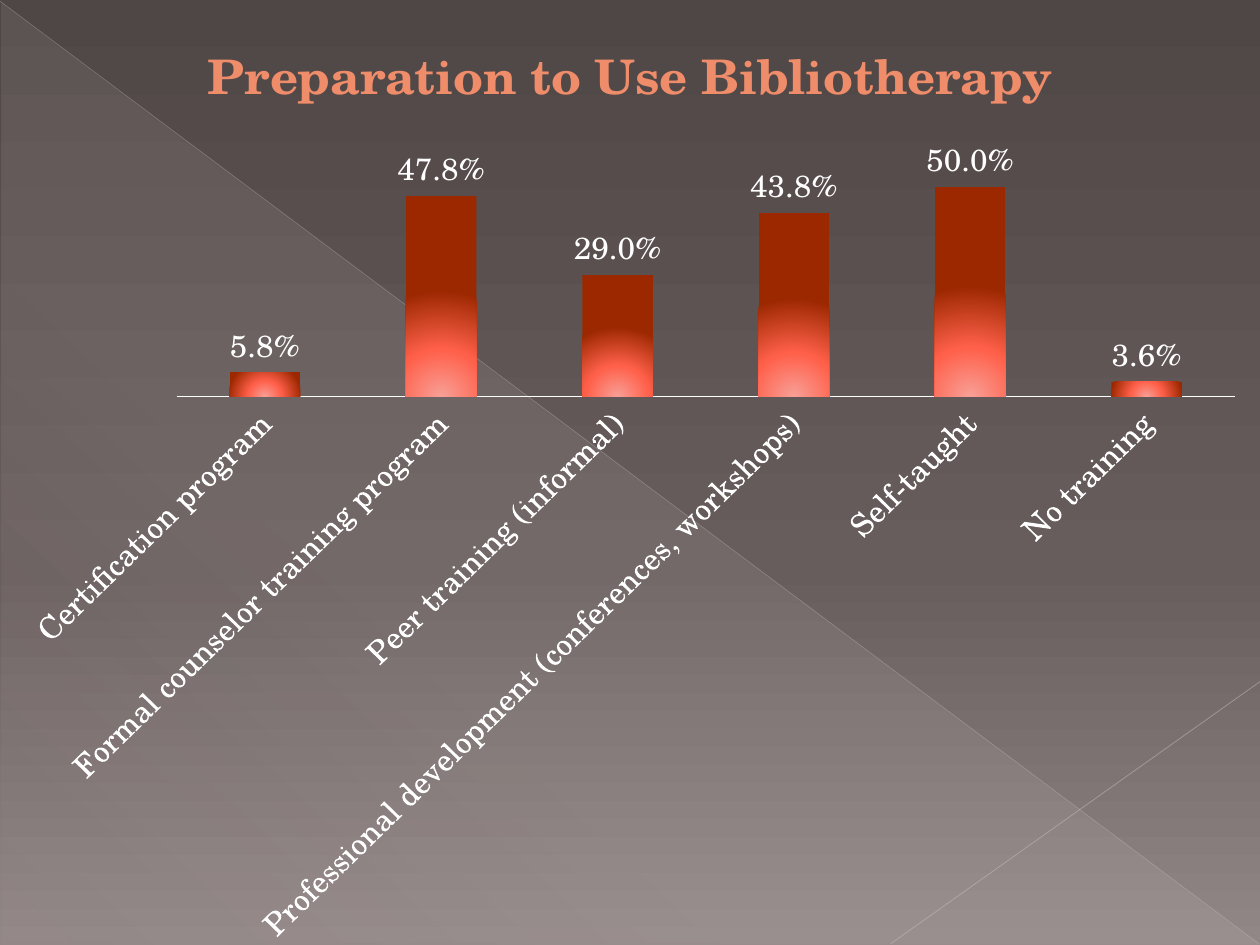
from lxml.etree import SubElement
from pptx import Presentation
from pptx.chart.data import CategoryChartData
from pptx.dml.color import RGBColor
from pptx.enum.chart import XL_CHART_TYPE, XL_LABEL_POSITION, XL_TICK_LABEL_POSITION, XL_TICK_MARK
from pptx.enum.shapes import MSO_CONNECTOR, MSO_SHAPE
from pptx.oxml import parse_xml
from pptx.oxml.ns import nsdecls, qn
from pptx.util import Inches, Pt

WHITE = RGBColor(0xFF, 0xFF, 0xFF)
SALMON = RGBColor(0xEF, 0x8C, 0x6A)
CREAM = RGBColor(0xE9, 0xE5, 0xDC)
PALE_LINE = RGBColor(0xC1, 0xBE, 0xBE)
LIGHT_LINE = RGBColor(0xC7, 0xC5, 0xC5)
DARK_TAUPE = RGBColor(0x4F, 0x46, 0x46)
TAUPE = RGBColor(0x68, 0x5D, 0x5D)
LIGHT_TAUPE = RGBColor(0x92, 0x87, 0x87)
BAR_GLOW = RGBColor(0xF8, 0xA0, 0x97)
BAR_RED = RGBColor(0xFF, 0x60, 0x4A)
BAR_RUST = RGBColor(0x9C, 0x28, 0x00)

RADIAL = '<a:path path="circle"><a:fillToRect l="50000" t="100000" r="50000"/></a:path>'

TRAINING = {
    "Certification program": 0.058,
    "Formal counselor training program": 0.478,
    "Peer training (informal)": 0.29,
    "Professional development (conferences, workshops)": 0.438,
    "Self-taught": 0.5,
    "No training": 0.036,
}


def linear(angle):
    return f'<a:lin ang="{angle * 60000}" scaled="0"/>'


class SlideBuilder:
    font_name = "TeX Gyre Schola"
    body_size = Pt(18)
    title_size = Pt(28)
    number_format = "0.0%"

    def __init__(self, page):
        self.page = page

    def gradient(self, fill, owner, stops, direction):
        fill.gradient()
        old = next(owner.iter(qn("a:gradFill")))
        marks = "".join(
            f'<a:gs pos="{place * 1000}"><a:srgbClr val="{color}">'
            f'<a:alpha val="{opacity * 1000}"/></a:srgbClr></a:gs>'
            for place, color, opacity in stops
        )
        new = parse_xml(
            f'<a:gradFill {nsdecls("a")} rotWithShape="1">'
            f"<a:gsLst>{marks}</a:gsLst>{direction}</a:gradFill>"
        )
        old.getparent().replace(old, new)

    def background(self, stops):
        self.gradient(self.page.background.fill, self.page.element, stops, linear(90))

    def triangle(self, left, top, width, height, stops, angle):
        shape = self.page.shapes.add_shape(
            MSO_SHAPE.RIGHT_TRIANGLE, Inches(left), Inches(top), Inches(width), Inches(height)
        )
        shape.shadow.inherit = False
        shape.line.fill.background()
        self.gradient(shape.fill, shape.element, stops, linear(angle))

    def line(self, start, end, color, width, opacity):
        connector = self.page.shapes.add_connector(
            MSO_CONNECTOR.STRAIGHT, *map(Inches, start + end)
        )
        connector.line.color.rgb = color
        connector.line.width = Pt(width)
        tint = next(connector.element.iter(qn("a:srgbClr")))
        SubElement(tint, qn("a:alpha"), val=str(opacity * 1000))
        SubElement(connector.element.spPr, qn("a:effectLst"))

    def chart_title(self, chart, text):
        chart.has_title = True
        para = chart.chart_title.text_frame.paragraphs[0]
        para.text = text
        para.font.name = self.font_name
        para.font.size = self.title_size
        para.font.bold = True
        para.font.color.rgb = SALMON
        chart.chart_title.include_in_layout = False

    def column_chart(self, title, values, stops):
        data = CategoryChartData(number_format=self.number_format)
        data.categories = list(values)
        data.add_series("Series 1", list(values.values()))
        chart = self.page.shapes.add_chart(
            XL_CHART_TYPE.COLUMN_CLUSTERED, 0, 0, Inches(10), Inches(7.5), data
        ).chart
        chart.font.name = self.font_name
        chart.font.size = self.body_size
        chart.font.color.rgb = WHITE
        chart.has_legend = False
        self.chart_title(chart, title)

        plot = chart.plots[0]
        plot.vary_by_categories = False
        plot.gap_width = 150
        plot.overlap = -25
        plot.has_data_labels = True
        labels = plot.data_labels
        labels.show_value = True
        labels.number_format = self.number_format
        labels.number_format_is_linked = False
        labels.position = XL_LABEL_POSITION.OUTSIDE_END
        series = plot.series[0]
        self.gradient(series.format.fill, series._element, stops, RADIAL)

        category_axis = chart.category_axis
        category_axis.major_tick_mark = XL_TICK_MARK.NONE
        category_axis.tick_label_position = XL_TICK_LABEL_POSITION.NEXT_TO_AXIS
        category_axis.format.line.color.rgb = WHITE
        category_axis.format.line.width = Pt(0.75)
        category_axis.tick_labels.font.size = self.body_size

        value_axis = chart.value_axis
        value_axis.has_major_gridlines = False
        value_axis.visible = False
        value_axis.tick_labels.number_format = self.number_format
        value_axis.tick_labels.number_format_is_linked = False


def main():
    deck = Presentation()
    deck.slide_width, deck.slide_height = Inches(10), Inches(7.5)
    builder = SlideBuilder(deck.slides.add_slide(deck.slide_layouts[6]))
    builder.background([(0, DARK_TAUPE, 100), (60, TAUPE, 100), (100, LIGHT_TAUPE, 100)])
    builder.triangle(0.01, 0.02, 9.99, 7.48, [(0, CREAM, 10), (70, CREAM, 8), (100, CREAM, 1)], 133)
    builder.line((0, 0.01), (9.99, 7.49), PALE_LINE, 0.39, 35)
    builder.line((10, 5.41), (7.07, 7.49), LIGHT_LINE, 0.47, 45)
    builder.column_chart(
        "Preparation to Use Bibliotherapy",
        TRAINING,
        [(0, BAR_GLOW, 100), (45, BAR_RED, 100), (100, BAR_RUST, 100)],
    )
    deck.save("out.pptx")


if __name__ == "__main__":
    main()
